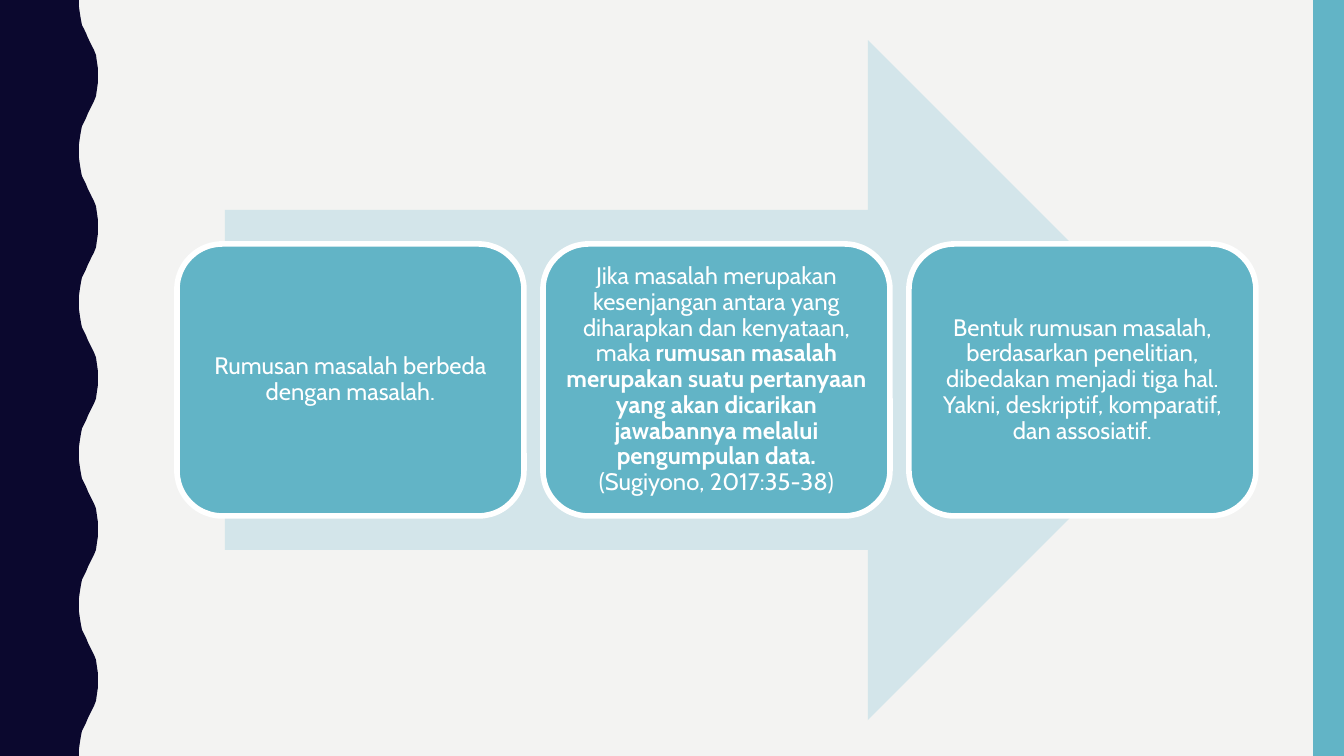
"""Build a slide with a three-step arrow process on problem formulation."""
from pptx import Presentation
from pptx import util as u
from pptx.dml.color import RGBColor
from pptx.enum import shapes, text

EMU_PER_PX = 914400 / 100.8
WIDTH, HEIGHT = 1344, 756
PAPER = RGBColor(0xF3, 0xF3, 0xF2)
NAVY = RGBColor(0x0B, 0x08, 0x2E)
TEAL = RGBColor(0x62, 0xB4, 0xC6)
PALE_TEAL = RGBColor(0xD3, 0xE5, 0xEA)
WHITE = RGBColor(0xFF, 0xFF, 0xFF)

WAVES = 5
HALF_WAVE = [(79, 0), (79, 7), (80, 14), (81, 20), (82, 25), (84, 29), (86, 33),
             (88, 38), (90, 42), (92, 46), (94, 50), (96, 55), (97, 62), (98, 69)]
CREST = (98, 76)

CARD_LEFT, CARD_TOP, CARD_WIDTH, CARD_HEIGHT, CARD_PITCH = 177, 244, 347, 272, 366
CARD_FRAME = dict(word_wrap=True, vertical_anchor=text.MSO_ANCHOR.MIDDLE,
                  **{f"margin_{side}": u.Inches(0.07)
                     for side in ("left", "top", "right", "bottom")})
CARD_PARAGRAPH = dict(alignment=text.PP_ALIGN.CENTER, line_spacing=0.9,
                      space_after=u.Pt(6))
CARD_FONT = dict(name="Cabin", size=u.Pt(17))

STEPS = [
    [("Rumusan masalah berbeda dengan masalah.", False)],
    [("Jika masalah merupakan kesenjangan antara yang diharapkan dan kenyataan, maka ", False),
     ("rumusan masalah merupakan suatu pertanyaan yang akan dicarikan jawabannya "
      "melalui pengumpulan data. ", True),
     ("(Sugiyono, 2017:35-38)", False)],
    [("Bentuk rumusan masalah, berdasarkan penelitian, dibedakan menjadi tiga hal. "
      "Yakni, deskriptif, komparatif, dan assosiatif.", False)],
]


def px(length):
    """Convert pixels to EMU."""
    return u.Emu(round(length * EMU_PER_PX))


def apply_format(target, values):
    """Set every attribute named in values on the target."""
    for attribute, value in values.items():
        setattr(target, attribute, value)


def paint(figure, color):
    """Give a shape a flat fill with neither line nor shadow."""
    figure.shadow.inherit = False
    figure.fill.solid()
    figure.fill.fore_color.rgb = color
    figure.line.fill.background()


def add_block(slide, preset, box, color):
    """Add a flat preset shape in the given pixel box."""
    block = slide.shapes.add_shape(preset, *map(px, box))
    paint(block, color)
    return block


def add_wavy_edge(slide):
    """Add the dark left band whose right edge repeats one wave."""
    period = HEIGHT / WAVES
    falling = [(x, period - y) for x, y in reversed(HALF_WAVE[1:])]
    wave = HALF_WAVE + [CREST] + falling
    edge = [(x, y + period * turn) for turn in range(WAVES) for x, y in wave]
    outline = edge + [(HALF_WAVE[0][0], HEIGHT), (0, HEIGHT)]
    builder = slide.shapes.build_freeform(0, 0)
    builder.add_line_segments([(px(x), px(y)) for x, y in outline], close=True)
    paint(builder.convert_to_shape(), NAVY)


def add_card(slide, left, phrases):
    """Add a rounded, outlined card holding one step of the process."""
    card = add_block(slide, shapes.MSO_SHAPE.ROUNDED_RECTANGLE,
                     (left, CARD_TOP, CARD_WIDTH, CARD_HEIGHT), TEAL)
    card.line.color.rgb = WHITE
    card.line.width = u.Pt(4)
    apply_format(card.text_frame, CARD_FRAME)
    statement = card.text_frame.paragraphs[0]
    apply_format(statement, CARD_PARAGRAPH)
    for wording, bold in phrases:
        phrase = statement.add_run()
        phrase.text = wording
        apply_format(phrase.font, {**CARD_FONT, "bold": bold})
        phrase.font.color.rgb = WHITE


def main():
    """Assemble and save the slide."""
    deck = Presentation()
    deck.slide_width, deck.slide_height = px(WIDTH), px(HEIGHT)
    slide = deck.slides.add_slide(deck.slide_layouts[6])
    slide.background.fill.solid()
    slide.background.fill.fore_color.rgb = PAPER
    add_wavy_edge(slide)
    add_block(slide, shapes.MSO_SHAPE.RECTANGLE, (1313, 0, 31, HEIGHT), TEAL)
    add_block(slide, shapes.MSO_SHAPE.RIGHT_ARROW, (225, 40, 983, 680), PALE_TEAL)
    for position, phrases in enumerate(STEPS):
        add_card(slide, CARD_LEFT + position * CARD_PITCH, phrases)
    deck.save("out.pptx")


if __name__ == "__main__":
    main()
